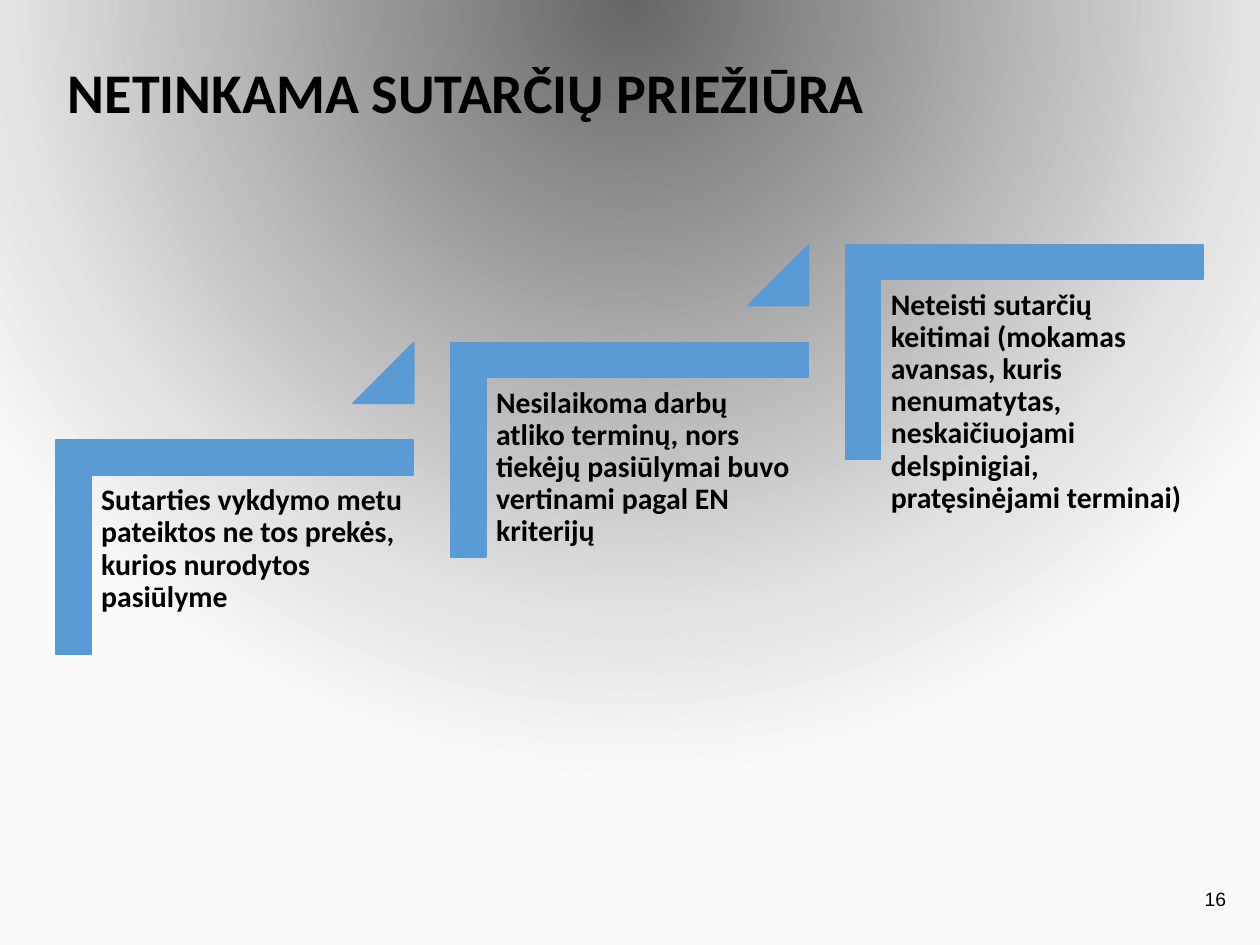
"""Build the slide on poor contract supervision as three rising steps."""
from dataclasses import dataclass

from pptx import Presentation
from pptx.dml.color import RGBColor
from pptx.enum.shapes import MSO_SHAPE
from pptx.enum.text import MSO_ANCHOR, MSO_AUTO_SIZE, PP_ALIGN
from pptx.oxml import parse_xml
from pptx.oxml.ns import nsdecls, qn
from pptx.util import Cm, Pt

BLUE = "5B9BD5"
BLACK = "000000"
STOPS = ((0, "666666"), (79, "E3E3E3"), (100, "FAFAFA"))
STEP_RIGHT, STEP_UP = 7.96, 1.97


@dataclass
class Step:
    """One step: its text and the top left of its corner shape in cm."""
    text: str
    x: float
    y: float


TEXTS = (
    "Sutarties vykdymo metu pateiktos ne tos prekės, kurios nurodytos pasiūlyme",
    "Nesilaikoma darbų atliko terminų, nors tiekėjų pasiūlymai buvo vertinami pagal EN kriterijų",
    "Neteisti sutarčių keitimai (mokamas avansas, kuris nenumatytas, neskaičiuojami "
    "delspinigiai, pratęsinėjami terminai)",
)


def color(value: str) -> RGBColor:
    """Turn a hex string into a colour."""
    return RGBColor.from_string(value)


def box(x: float, y: float, w: float, h: float) -> tuple:
    """Give a position and size in cm as lengths."""
    return Cm(x), Cm(y), Cm(w), Cm(h)


def write(sp, text: str, *, size: float, font: str = "Calibri", bold: bool = True,
          align=PP_ALIGN.LEFT, anchor=MSO_ANCHOR.TOP, spacing: float = 0.9,
          side: float = 0.25, edge: float = 0.13) -> None:
    """Put formatted text into a shape."""
    tf = sp.text_frame
    tf.word_wrap = True
    tf.auto_size = MSO_AUTO_SIZE.NONE
    tf.vertical_anchor = anchor
    tf.margin_left = tf.margin_right = Cm(side)
    tf.margin_top = tf.margin_bottom = Cm(edge)
    p = tf.paragraphs[0]
    p.alignment = align
    p.line_spacing = spacing
    r = p.add_run()
    r.text = text
    r.font.name, r.font.size, r.font.bold = font, Pt(size), bold
    r.font.color.rgb = color(BLACK)


def draw_shape(group, kind, place: tuple, adjustments: tuple, rotation: float = 0) -> None:
    """Draw a blue preset shape."""
    sp = group.shapes.add_shape(kind, *place)
    sp.shadow.inherit = False
    sp.rotation = rotation
    for i, value in enumerate(adjustments):
        sp.adjustments[i] = value
    sp.fill.solid()
    sp.fill.fore_color.rgb = color(BLUE)
    sp.line.color.rgb = color(BLUE)
    sp.line.width = Pt(1)


def draw_step(group, step: Step, is_last: bool) -> None:
    """Draw a corner, its text and the triangle that leads upward."""
    x, y = step.x, step.y
    draw_shape(group, MSO_SHAPE.CORNER, box(x, y, 4.32, 7.19), (0.161, 0.161), 90)
    write(group.shapes.add_textbox(*box(x - 0.71, y + 2.16, 6.5, 5.69)), step.text,
          size=17, side=0.18, edge=0.18)
    if not is_last:
        draw_shape(group, MSO_SHAPE.ISOSCELES_TRIANGLE,
                   box(x + 4.55, y - 0.53, 1.22, 1.22), (1,))


def set_background(s) -> None:
    """Fill the background with a radial grey gradient centred above the slide."""
    s.background.fill.gradient()
    old = s.element.find(".//" + qn("a:gradFill"))
    stops = "".join(f'<a:gs pos="{pos * 1000}"><a:srgbClr val="{value}"/></a:gs>'
                    for pos, value in STOPS)
    new = parse_xml(
        f'<a:gradFill {nsdecls("a")} rotWithShape="1"><a:gsLst>{stops}</a:gsLst>'
        '<a:path path="circle"><a:fillToRect l="50000" t="-80000" r="50000" b="180000"/>'
        '</a:path></a:gradFill>')
    old.getparent().replace(old, new)


def main() -> None:
    """Build and save the presentation."""
    prs = Presentation()
    prs.slide_width, prs.slide_height = Cm(25.4), Cm(19.05)
    s = prs.slides.add_slide(prs.slide_layouts[5])
    set_background(s)

    title = s.shapes.title
    title.left, title.top, title.width, title.height = box(1.12, 1.19, 22.53, 2.9)
    write(title, "NETINKAMA SUTARČIŲ PRIEŽIŪRA", size=32)

    group = s.shapes.add_group_shape()
    steps = [Step(text, 2.57 + i * STEP_RIGHT, 7.44 - i * STEP_UP)
             for i, text in enumerate(TEXTS)]
    for step in steps:
        draw_step(group, step, step is steps[-1])

    write(s.shapes.add_textbox(*box(19.76, 17.6, 5.21, 1.02)), "16", size=11, font="Arial",
          bold=False, align=PP_ALIGN.RIGHT, anchor=MSO_ANCHOR.MIDDLE, spacing=1.0)
    prs.save("out.pptx")


if __name__ == "__main__":
    main()
